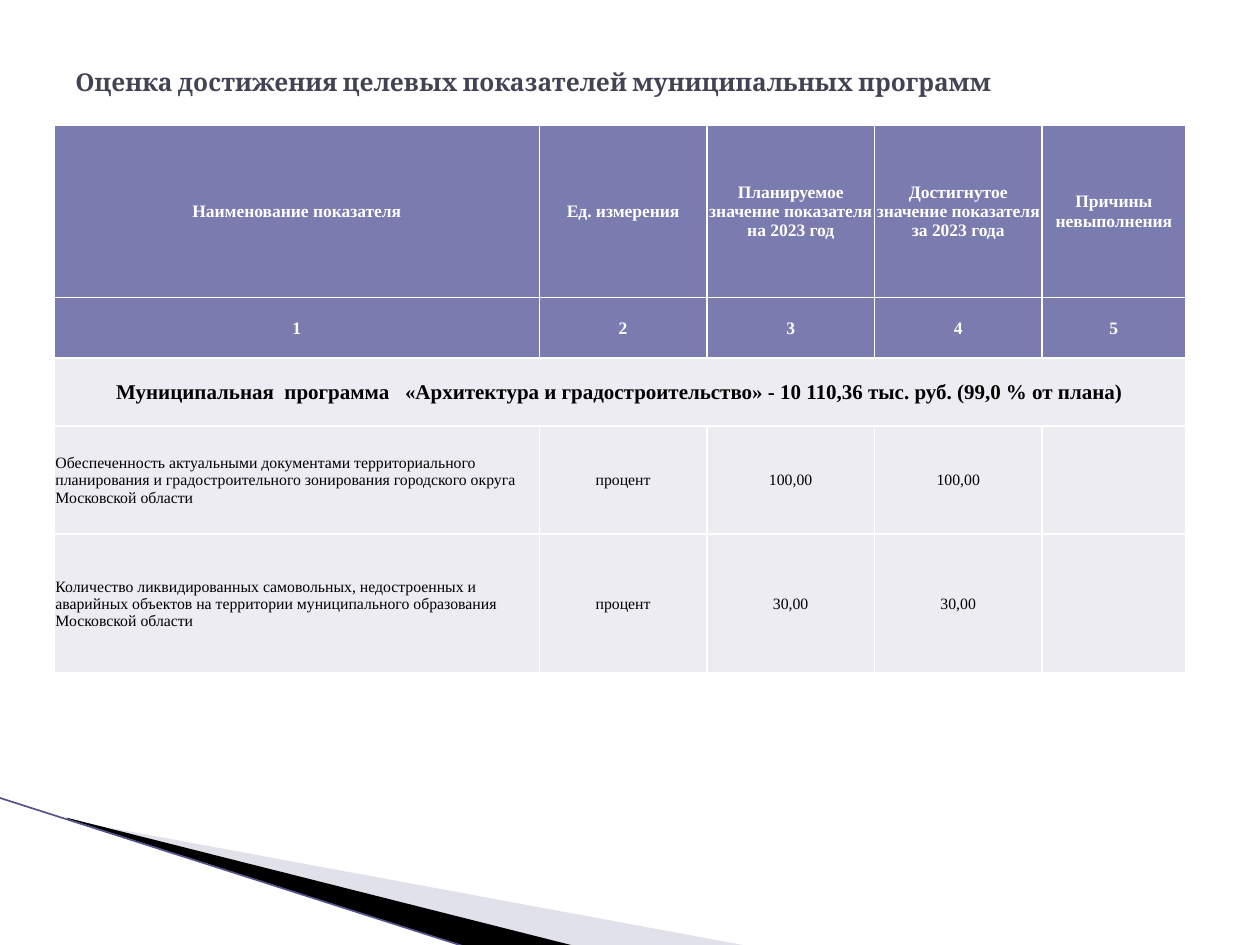
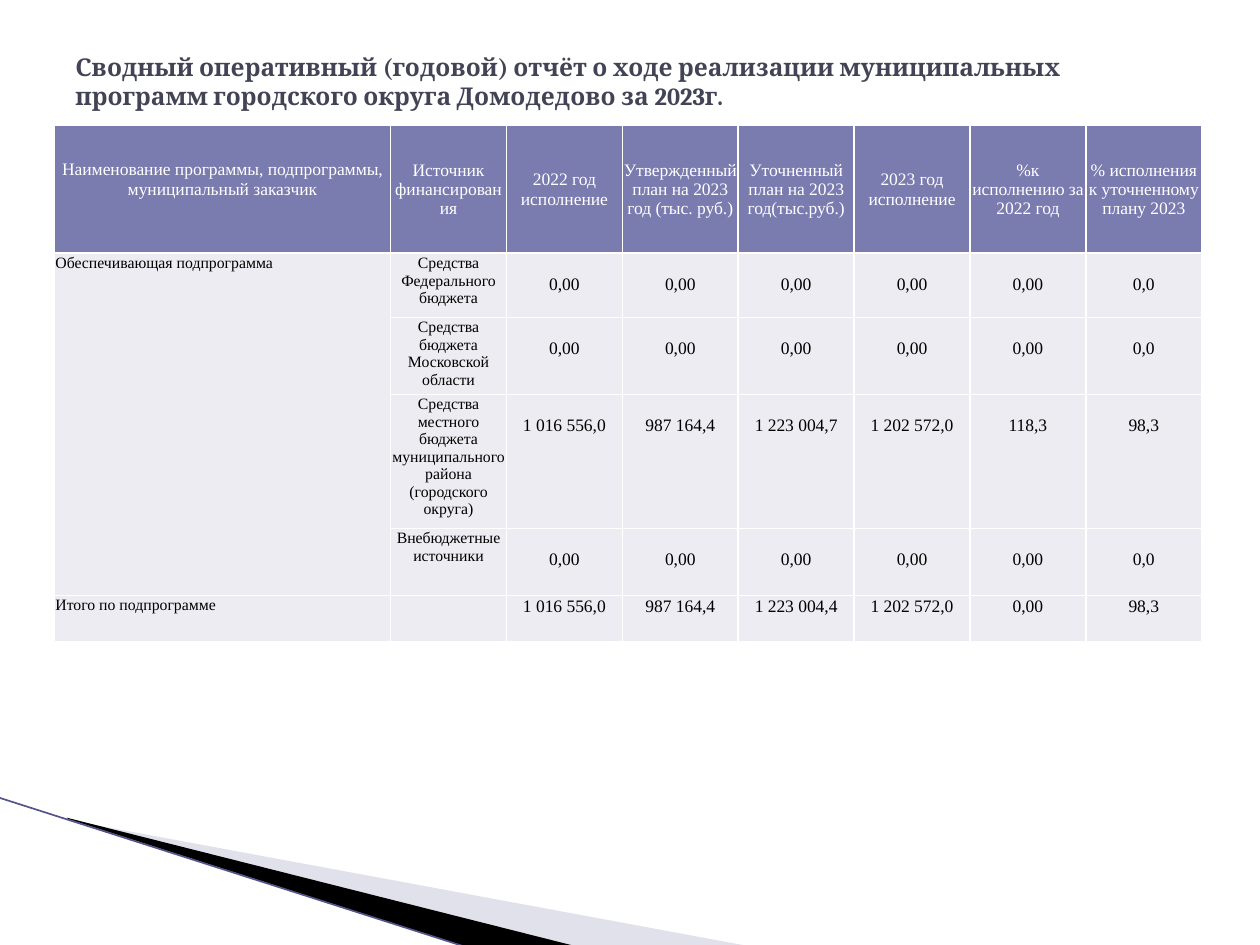
from dataclasses import dataclass

from lxml import etree
from pptx import Presentation
from pptx import util as u
from pptx.dml.color import RGBColor
from pptx.enum import shapes, text
from pptx.oxml import parse_xml
from pptx.oxml.ns import qn

CENTER, LEFT = text.PP_ALIGN.CENTER, text.PP_ALIGN.LEFT
MIDDLE, TOP = text.MSO_ANCHOR.MIDDLE, text.MSO_ANCHOR.TOP
DRAWING_NS = "http://schemas.openxmlformats.org/drawingml/2006/main"


@dataclass(frozen=True)
class Theme:
    title_font: str = "Cambria"
    table_font: str = "Times New Roman"
    title_color: str = "424456"
    header_fill: str = "7A7BAE"
    header_text: str = "FFFFFF"
    body_fill: str = "ECECF2"
    body_text: str = "000000"
    border: str = "FFFFFF"
    pale_wedge: str = "B6B6D1"
    dark_wedge: str = "000000"
    edge: str = "53548A"
    title_size: int = 14
    program_size: int = 12
    header_size: int = 10
    number_size: int = 10
    body_size: int = 9
    inset: float = 0.01
    line_gap: float = 0.16  # height of one line of table text


class Deck:
    def __init__(self, theme):
        self.theme = theme
        self.prs = Presentation()
        self.prs.slide_width, self.prs.slide_height = u.Inches(10), u.Inches(7.5)
        self.slide = None

    def new_slide(self, title):
        self.slide = self.prs.slides.add_slide(self.prs.slide_layouts[6])
        self.corner()
        self.title(title)

    # Shared corner decoration
    def corner(self):
        t = self.theme
        self.wedge([(0.55, 6.51), (5.95, 7.51), (4.56, 7.51), (0.55, 6.5)], t.pale_wedge, 40)
        self.wedge([(0.53, 6.49), (4.57, 7.51), (3.72, 7.52), (0.54, 6.5)], t.dark_wedge)
        self.line((-0.01, 6.33), (3.71, 7.52), t.edge, 0.95)

    def wedge(self, points, color, opacity=100):
        start, *rest = [(u.Inches(x), u.Inches(y)) for x, y in points]
        builder = self.slide.shapes.build_freeform(*start)
        builder.add_line_segments(rest)
        wedge = builder.convert_to_shape()
        wedge.shadow.inherit = False
        wedge.line.fill.background()
        wedge.fill.solid()
        wedge.fill.fore_color.rgb = RGBColor.from_string(color)
        if opacity < 100:
            fill_color = wedge.fill._xPr.find(qn("a:solidFill"))[0]
            etree.SubElement(fill_color, qn("a:alpha")).set("val", str(opacity * 1000))

    def line(self, begin, end, color, width):
        edge = self.slide.shapes.add_connector(
            shapes.MSO_CONNECTOR.STRAIGHT, *[u.Inches(v) for v in begin + end])
        edge.line.color.rgb = RGBColor.from_string(color)
        edge.line.width = u.Pt(width)
        etree.SubElement(edge._element.spPr, qn("a:effectLst"))

    # Text
    def run(self, paragraph, words, font, size, color, bold):
        run = paragraph.add_run()
        run.text = words
        run.font.name = font
        run.font.size = u.Pt(size)
        run.font.bold = bold
        run.font.color.rgb = RGBColor.from_string(color)

    def title(self, words):
        t = self.theme
        box = self.slide.shapes.add_textbox(
            u.Inches(0.5), u.Inches(0.3), u.Inches(9), u.Inches(0.69))
        frame = box.text_frame
        frame.word_wrap = True
        frame.vertical_anchor = MIDDLE
        self.run(frame.paragraphs[0], words, t.title_font, t.title_size, t.title_color, True)

    # Tables
    def table(self, widths, heights):
        frame = self.slide.shapes.add_table(
            len(heights), len(widths), u.Inches(0.43), u.Inches(0.99),
            u.Inches(sum(widths)), u.Inches(sum(heights)))
        table = frame.table
        table.first_row = table.horz_banding = False
        for column, width in zip(table.columns, widths):
            column.width = u.Inches(width)
        for row, height in zip(table.rows, heights):
            row.height = u.Inches(height)
        return table

    def borders(self, cell):
        for side in ("lnL", "lnR", "lnT", "lnB"):
            cell._tc.get_or_add_tcPr().append(parse_xml(
                f'<a:{side} xmlns:a="{DRAWING_NS}" w="12700"><a:solidFill>'
                f'<a:srgbClr val="{self.theme.border}"/></a:solidFill></a:{side}>'))

    def cell(self, cell, words, header=False, size=None, bold=False,
             align=CENTER, anchor=MIDDLE, lines_above=0, lines_below=0):
        t = self.theme
        size = size or t.body_size
        self.borders(cell)
        cell.fill.solid()
        cell.fill.fore_color.rgb = RGBColor.from_string(t.header_fill if header else t.body_fill)
        cell.margin_left = cell.margin_right = u.Inches(t.inset)
        cell.margin_top = u.Inches(t.inset + lines_above * t.line_gap)
        cell.margin_bottom = u.Inches(lines_below * t.line_gap)
        cell.vertical_anchor = anchor
        paragraph = cell.text_frame.paragraphs[0]
        paragraph.alignment = align
        if words:
            color = t.header_text if header else t.body_text
            self.run(paragraph, words, t.table_font, size, color, bold)
        else:
            paragraph.font.size = u.Pt(size)


def indicators_slide(deck):
    t = deck.theme
    deck.new_slide("Оценка достижения целевых показателей муниципальных программ")
    headings = ["Наименование показателя", "Ед. измерения",
                "Планируемое значение показателя на 2023 год",
                "Достигнутое значение показателя за 2023 года",
                "Причины невыполнения"]
    program = ("Муниципальная  программа   «Архитектура и градостроительство»"
               " - 10 110,36 тыс. руб. (99,0 % от плана)")
    indicators = [
        ["Обеспеченность актуальными документами территориального планирования и "
         "градостроительного зонирования городского округа Московской области",
         "процент", "100,00", "100,00", ""],
        ["Количество ликвидированных самовольных, недостроенных и аварийных объектов "
         "на территории муниципального образования Московской области",
         "процент", "30,00", "30,00", ""],
    ]
    table = deck.table([3.85, 1.33, 1.33, 1.33, 1.14], [1.37, 0.48, 0.54, 0.86, 1.1])

    # Headings and column numbers
    for column, heading in enumerate(headings):
        for row, words in enumerate([heading, str(column + 1)]):
            deck.cell(table.cell(row, column), words, header=True, size=t.header_size, bold=True)

    # Program band across all columns
    for column in range(len(headings)):
        deck.cell(table.cell(2, column), "" if column else program,
                  size=t.program_size, bold=True)
    table.cell(2, 0).merge(table.cell(2, len(headings) - 1))

    # Indicators
    for row, indicator in enumerate(indicators, 3):
        for column, words in enumerate(indicator):
            deck.cell(table.cell(row, column), words, align=CENTER if column else LEFT)


def funding_slide(deck):
    t = deck.theme
    deck.new_slide("Сводный оперативный (годовой) отчёт о ходе реализации муниципальных "
                   "программ городского округа Домодедово за 2023г.")
    headings = ["Наименование программы, подпрограммы, муниципальный заказчик",
                "Источник финансирования", "2022 год исполнение",
                "Утвержденный план на 2023 год (тыс. руб.)",
                "Уточненный план на 2023 год(тыс.руб.)", "2023 год исполнение",
                "%к исполнению за 2022 год", "% исполнения к уточненному плану 2023"]
    no_funds = ["0,00"] * 5 + ["0,0"]
    funding = [
        ["Обеспечивающая подпрограмма", "Средства Федерального бюджета", *no_funds],
        ["", "Средства бюджета Московской области", *no_funds],
        ["", "Средства местного бюджета муниципального района (городского округа)",
         "1 016 556,0", "987 164,4", "1 223 004,7", "1 202 572,0", "118,3", "98,3"],
        ["", "Внебюджетные источники", *no_funds],
        ["Итого по подпрограмме", "",
         "1 016 556,0", "987 164,4", "1 223 004,4", "1 202 572,0", "0,00", "98,3"],
    ]
    total_row = len(funding)
    table = deck.table([2.67] + [0.92] * 7, [1.02, 0.51, 0.51, 0.51, 0.53, 0.37])

    # Headings
    for column, heading in enumerate(headings):
        deck.cell(table.cell(0, column), heading, header=True, size=t.header_size,
                  lines_below=0 if column else 1)

    # Funding sources and total; source figures sit one line lower
    for row, values in enumerate(funding, 1):
        for column, words in enumerate(values):
            is_number = column > 1
            deck.cell(table.cell(row, column), words, anchor=TOP,
                      size=t.number_size if is_number else t.body_size,
                      align=CENTER if column else LEFT,
                      lines_above=1 if is_number and row < total_row else 0)
    table.cell(1, 0).merge(table.cell(total_row - 1, 0))


def main():
    deck = Deck(Theme())
    indicators_slide(deck)
    funding_slide(deck)
    deck.prs.save("out.pptx")


if __name__ == "__main__":
    main()
